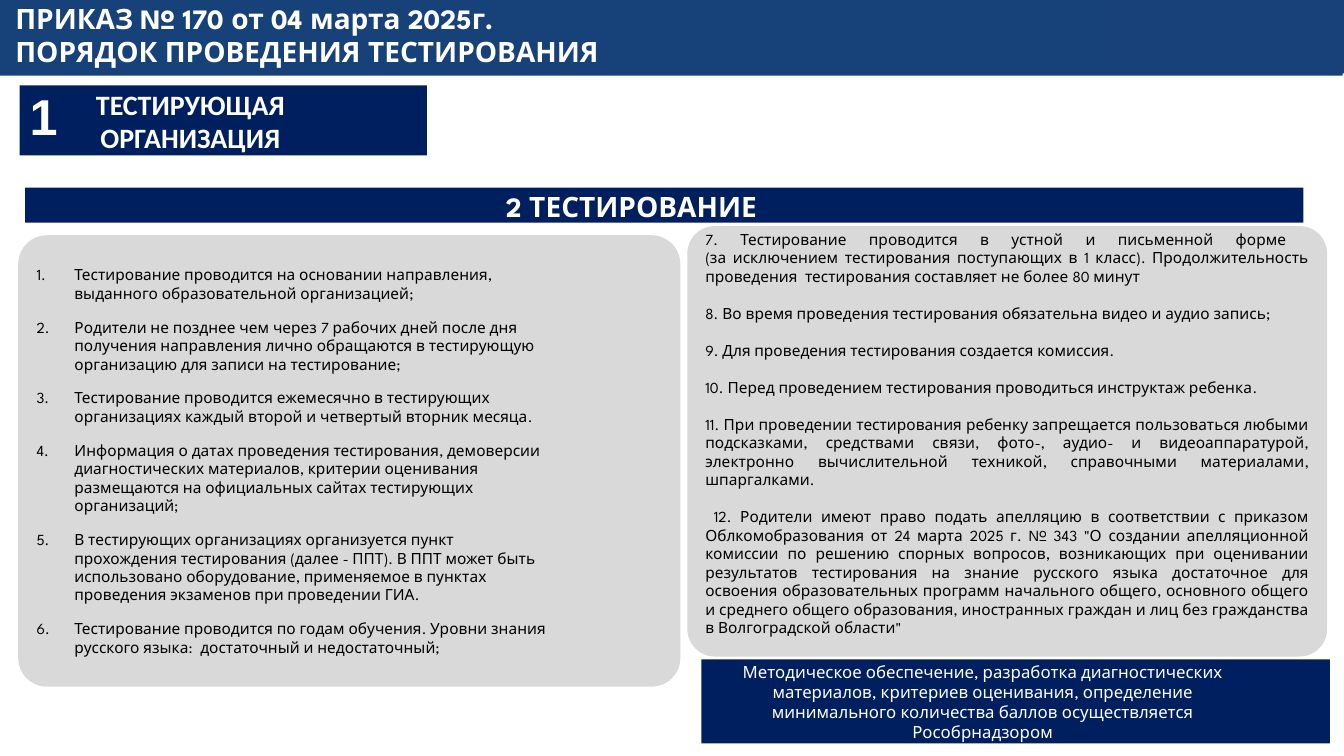
from copy import deepcopy

from lxml.etree import SubElement
from pptx import Presentation
from pptx.dml.color import RGBColor
from pptx.enum.shapes import MSO_SHAPE as SHAPE
from pptx.enum.text import MSO_ANCHOR as ANCHOR, PP_ALIGN as ALIGN
from pptx.oxml.ns import qn
from pptx.util import Pt

BAR = RGBColor(0x17, 0x41, 0x79)
BAR_END = RGBColor(0x18, 0x41, 0x79)
NAVY = RGBColor(0x00, 0x1F, 0x5F)
GREY = RGBColor(0xD9, 0xD9, 0xD9)
WHITE = RGBColor(0xFF, 0xFF, 0xFF)
BLACK = RGBColor(0x00, 0x00, 0x00)

SPARTAN = "League Spartan"
INDENT = 27
RIGHT_GAP = 74

TITLE = "ПРИКАЗ № 170 от 04 марта 2025г.\vПОРЯДОК ПРОВЕДЕНИЯ ТЕСТИРОВАНИЯ"
SUPPORT = (
    "Методическое обеспечение, разработка диагностических материалов, "
    "критериев оценивания, определение минимального количества баллов "
    "осуществляется Рособрнадзором"
)
LEFT_RULES = [
    "Тестирование проводится на основании направления, выданного образовательной организацией;",
    "Родители не позднее чем через 7 рабочих дней после дня получения направления "
    "лично обращаются в тестирующую организацию для записи на тестирование;",
    "Тестирование проводится ежемесячно в тестирующих организациях каждый второй "
    "и четвертый вторник месяца.",
    "Информация о датах проведения тестирования, демоверсии диагностических материалов, "
    "критерии оценивания размещаются на официальных сайтах тестирующих организаций;",
    "В тестирующих организациях организуется пункт прохождения тестирования "
    "(далее - ППТ). В ППТ может быть использовано оборудование, применяемое "
    "в пунктах проведения экзаменов при проведении ГИА.",
    "Тестирование проводится по годам обучения. Уровни знания русского языка:  "
    "достаточный и недостаточный;",
]
RIGHT_RULES = [
    "7. Тестирование проводится в устной и письменной форме \v"
    "(за исключением тестирования поступающих в 1 класс). Продолжительность "
    "проведения  тестирования составляет не более 80 минут",
    "8. Во время проведения тестирования обязательна видео и аудио запись;",
    "9. Для проведения тестирования создается комиссия.",
    "10. Перед проведением тестирования проводиться инструктаж ребенка.",
    "11. При проведении тестирования ребенку запрещается пользоваться любыми "
    "подсказками, средствами связи, фото-, аудио- и видеоаппаратурой, "
    "электронно вычислительной техникой, справочными материалами, шпаргалками.",
    " 12. Родители имеют право подать апелляцию в соответствии с приказом "
    "Облкомобразования от 24 марта 2025 г. № 343 \"О создании апелляционной комиссии "
    "по решению спорных вопросов, возникающих при оценивании результатов тестирования "
    "на знание русского языка достаточное для освоения образовательных программ "
    "начального общего, основного общего и среднего общего образования, "
    "иностранных граждан и лиц без гражданства в Волгоградской области\"",
]


def add_box(slide, kind, box, color):
    s = slide.shapes.add_shape(kind, *map(Pt, box))
    s.shadow.inherit = False
    s.fill.solid()
    s.fill.fore_color.rgb = color
    s.line.fill.background()
    return s


def set_frame(s, insets, anchor=ANCHOR.TOP, wrap=True):
    tf = s.text_frame
    sides = ("left", "top", "right", "bottom")
    frame = {f"margin_{side}": Pt(n) for side, n in zip(sides, insets)}
    frame.update(vertical_anchor=anchor, word_wrap=wrap)
    for name, value in frame.items():
        setattr(tf, name, value)
    return tf


def write(tf, texts, size, color, align=ALIGN.LEFT, gap=0, font=SPARTAN,
          bold=False, numbered=False):
    fmt = {"name": font, "size": Pt(size), "bold": bold}
    for i, text in enumerate(texts):
        p = tf.add_paragraph() if i else tf.paragraphs[0]
        p.text = text
        p.alignment = align
        p.space_before = Pt(gap if i else 0)
        if numbered:
            add_number(p)
        for r in p.runs:
            for name, value in fmt.items():
                setattr(r.font, name, value)
            r.font.color.rgb = color
        for br in p._p.findall(qn("a:br")):
            br.append(deepcopy(p.runs[0]._r.rPr))


def add_number(p):
    pPr = p._p.get_or_add_pPr()
    pPr.set("marL", str(Pt(INDENT)))
    pPr.set("indent", str(-Pt(INDENT)))
    SubElement(pPr, qn("a:buFont"), typeface="+mj-lt")
    SubElement(pPr, qn("a:buAutoNum"), type="arabicPeriod")


def add_banner(slide, box, text, size, font=SPARTAN, bold=True):
    s = add_box(slide, SHAPE.RECTANGLE, box, NAVY)
    tf = set_frame(s, (INDENT, 1.4, RIGHT_GAP, 0))
    write(tf, [text], size, WHITE, ALIGN.CENTER, font=font, bold=bold)


def add_panel(slide, box, texts, insets, align, gap, numbered=False):
    s = add_box(slide, SHAPE.ROUNDED_RECTANGLE, box, GREY)
    s.adjustments[0] = 0.064
    tf = set_frame(s, insets, ANCHOR.MIDDLE)
    write(tf, texts, 11, BLACK, align, gap, numbered=numbered)


def add_label(slide, box, text, size, insets, align, font=SPARTAN, wrap=True):
    s = slide.shapes.add_textbox(*map(Pt, box))
    tf = set_frame(s, insets, wrap=wrap)
    write(tf, [text], size, WHITE, align, font=font, bold=True)


def main():
    prs = Presentation()
    prs.slide_width, prs.slide_height = Pt(960), Pt(540)
    slide = prs.slides.add_slide(prs.slide_layouts[6])

    add_box(slide, SHAPE.RECTANGLE, (0, 0, 959, 54), BAR)
    add_box(slide, SHAPE.RECTANGLE, (786, 0, 174, 52.5), BAR_END)
    add_label(slide, (10, 0, 789, 50), TITLE, 20, (1, 1, 0, 0), ALIGN.LEFT)

    add_banner(slide, (18, 134, 913, 25), "2 ТЕСТИРОВАНИЕ", 20)
    add_panel(slide, (13, 168, 473, 322.5), LEFT_RULES,
              (7.2, 3.6, RIGHT_GAP + 7.2, 3.6), ALIGN.LEFT, 10.9, numbered=True)
    add_panel(slide, (491, 161.5, 457, 307.5), RIGHT_RULES,
              (7.2, 0, 7.2, 11.5), ALIGN.JUSTIFY, 13.2)
    add_banner(slide, (14, 61, 291, 50), "ТЕСТИРУЮЩАЯ ОРГАНИЗАЦИЯ", 20, "Calibri")
    add_banner(slide, (501, 471, 449, 60), SUPPORT, 12, bold=False)
    add_label(slide, (14, 57.5, 32.5, 51), "1", 36, (7.2, 3.6, 7.2, 3.6),
              ALIGN.CENTER, "Arial", wrap=False)

    prs.save("out.pptx")


if __name__ == "__main__":
    main()
